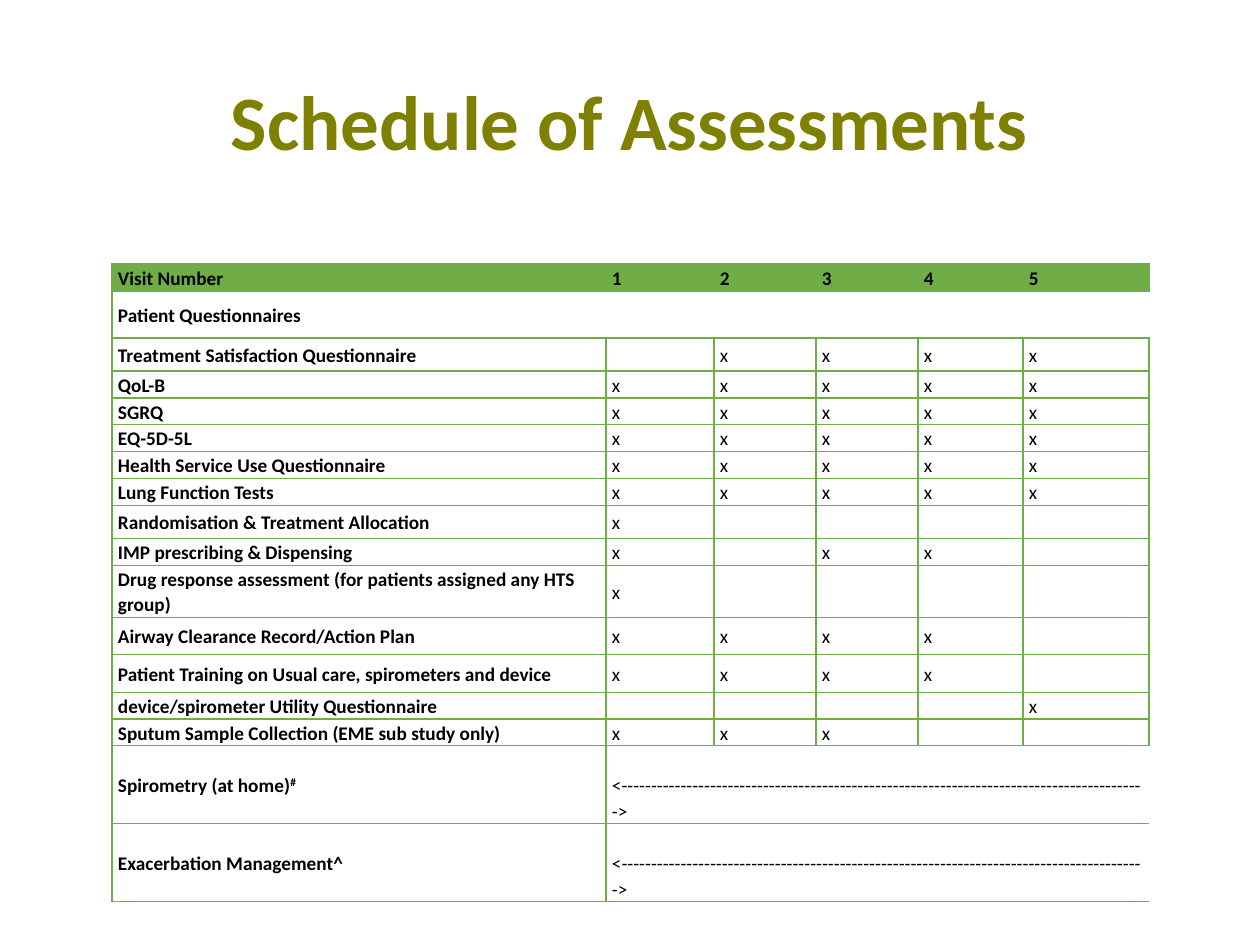
import pptx
import pptx.dml.color
import pptx.enum.text
import pptx.oxml
import pptx.oxml.ns
import pptx.util

COLORS = {"title": "808000", "green": "70AD47", "text": "000000"}
FONT = "Calibri"
SCALE = 914400 / 126
TIMELINE = "<" + "-" * 89 + ">"

COLUMNS = [494, 108, 102, 102, 105, 126]
ROWS = [
    (27, "Visit Number", "12345"),
    (47, "Patient Questionnaires", "section"),
    (33, "Treatment Satisfaction Questionnaire", " xxxx"),
    (27, "QoL-B", "xxxxx"),
    (26, "SGRQ", "xxxxx"),
    (27, "EQ-5D-5L", "xxxxx"),
    (27, "Health Service Use Questionnaire", "xxxxx"),
    (27, "Lung Function Tests", "xxxxx"),
    (33, "Randomisation & Treatment Allocation", "x    "),
    (27, "IMP prescribing & Dispensing", "x xx "),
    (52, "Drug response assessment (for patients assigned any HTS group)", "x    "),
    (37, "Airway Clearance Record/Action Plan", "xxxx "),
    (38, "Patient Training on Usual care, spirometers and device", "xxxx "),
    (27, "device/spirometer Utility Questionnaire", "    x"),
    (26, "Sputum Sample Collection (EME sub study only)", "xxx  "),
    (78, "Spirometry (at home)#", "timeline"),
    (77, "Exacerbation Management^", "timeline"),
]


def px(n):
    return pptx.util.Emu(round(n * SCALE))


def rgb(name):
    return pptx.dml.color.RGBColor.from_string(COLORS[name])


class Deck:
    def __init__(self, width, height):
        self.prs = pptx.Presentation()
        self.prs.slide_width, self.prs.slide_height = px(width), px(height)
        self.s = self.prs.slides.add_slide(self.prs.slide_layouts[5])

    def style(self, p, size, color, bold):
        p.font.name = FONT
        p.font.size = pptx.util.Pt(size)
        p.font.bold = bold
        p.font.color.rgb = rgb(color)

    def title(self, text, x, y, w, h):
        sp = self.s.shapes.title
        sp.left, sp.top, sp.width, sp.height = px(x), px(y), px(w), px(h)
        tf = sp.text_frame
        tf.text = text
        tf.vertical_anchor = pptx.enum.text.MSO_ANCHOR.MIDDLE
        p = tf.paragraphs[0]
        p.alignment = pptx.enum.text.PP_ALIGN.CENTER
        p.line_spacing = 0.9
        self.style(p, 44, "title", True)

    def borders(self, cell, sides):
        tcPr = cell._tc.get_or_add_tcPr()
        for side in "LRTB":
            fill = "<a:noFill/>"
            if side in sides:
                fill = f'<a:solidFill><a:srgbClr val="{COLORS["green"]}"/></a:solidFill>'
            tcPr.append(pptx.oxml.parse_xml(
                f'<a:ln{side} {pptx.oxml.ns.nsdecls("a")} w="12700">{fill}</a:ln{side}>'))

    def cell(self, cell, text, bold, sides, filled=False, top=1):
        cell.margin_left = cell.margin_right = px(6)
        cell.margin_top, cell.margin_bottom = px(top), 0
        cell.vertical_anchor = pptx.enum.text.MSO_ANCHOR.MIDDLE
        self.borders(cell, sides)
        if filled:
            cell.fill.solid()
            cell.fill.fore_color.rgb = rgb("green")
        else:
            cell.fill.background()
        p = cell.text_frame.paragraphs[0]
        p.line_spacing = 1.07
        p.space_after = pptx.util.Pt(8)
        self.style(p, 11, "text", bold)
        label, mark, _ = text.partition("#")
        if label:
            p.add_run().text = label
        else:
            p._p.get_or_add_endParaRPr().set("sz", "1100")
        if mark:
            r = p.add_run()
            r.text = mark
            r._r.get_or_add_rPr().set("baseline", "30000")

    def schedule(self, x, y, columns, rows):
        width, height = sum(columns), sum(row[0] for row in rows)
        table = self.s.shapes.add_table(
            len(rows), len(columns), px(x), px(y), px(width), px(height)).table
        table.first_row = table.horz_banding = False
        for column, w in zip(table.columns, columns):
            column.width = px(w)
        last = len(columns) - 1
        for i, (h, label, marks) in enumerate(rows):
            table.rows[i].height = px(h)
            header, section, timeline = i == 0, marks == "section", marks == "timeline"
            self.cell(table.cell(i, 0), label, True, "LTB" if section else "LRTB", header)
            for j in range(1, last + 1):
                sides, text, top = "LRTB", "", 1
                if section:
                    sides = "TB"
                elif timeline:
                    sides = "TB" + "L" * (j == 1) + "R" * (j == last)
                    if j == 1:
                        text, top = TIMELINE, 27
                else:
                    text = marks[j - 1].strip()
                self.cell(table.cell(i, j), text, header, sides, header, top)
            if section or timeline:
                table.cell(i, 1).merge(table.cell(i, last))


def main():
    deck = Deck(1260, 945)
    deck.title("Schedule of Assessments", 0, 34, 1260, 183)
    deck.schedule(112, 264, COLUMNS, ROWS)
    deck.prs.save("out.pptx")


if __name__ == "__main__":
    main()
